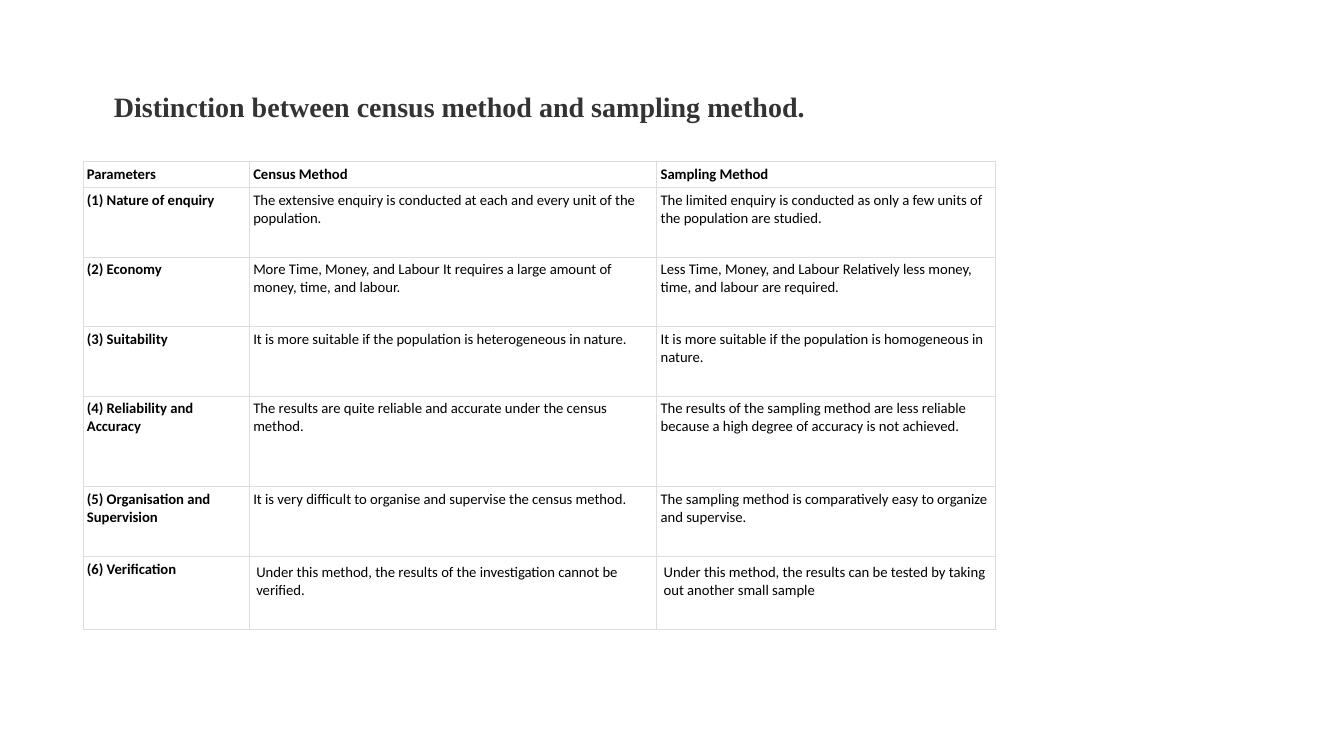
from lxml import etree
from pptx import Presentation
from pptx import util as u
from pptx.dml.color import RGBColor
from pptx.enum import text
from pptx.oxml import ns

WHITE = RGBColor(0xFF, 0xFF, 0xFF)
BLACK = RGBColor(0x00, 0x00, 0x00)
CHARCOAL = RGBColor(0x33, 0x33, 0x33)
RULE = RGBColor(0xDD, 0xDD, 0xDD)

COLUMNS = [12.38, 30.31, 25.21]
ROWS = [3.47, 9.2, 9.2, 9.2, 12, 9.2, 9.73]
COMPARISON = [
    ("Parameters", "Census Method", "Sampling Method"),
    ("(1) Nature of enquiry",
     "The extensive enquiry is conducted at each and every unit of the population.",
     "The limited enquiry is conducted as only a few units of the population are studied."),
    ("(2) Economy",
     "More Time, Money, and Labour It requires a large amount of money, time, and labour.",
     "Less Time, Money, and Labour Relatively less money, time, and labour are required."),
    ("(3) Suitability",
     "It is more suitable if the population is heterogeneous in nature.",
     "It is more suitable if the population is homogeneous in nature."),
    ("(4) Reliability and Accuracy",
     "The results are quite reliable and accurate under the census method.",
     "The results of the sampling method are less reliable because a high degree "
     "of accuracy is not achieved."),
    ("(5) Organisation and Supervision",
     "It is very difficult to organise and supervise the census method.",
     "The sampling method is comparatively easy to organize and supervise."),
    ("(6) Verification",
     "Under this method, the results of the investigation cannot be verified.",
     "Under this method, the results can be tested by taking out another small sample"),
]


class Deck:
    title_font, body_font = "Times New Roman", "Calibri"
    title_size, body_size = 20, 10.5
    inset, wide_inset = 0.04, 0.07

    def __init__(self):
        self.prs = Presentation()
        self.prs.slide_width = u.Inches(13.33)
        self.prs.slide_height = u.Inches(7.5)
        self.s = self.prs.slides.add_slide(self.prs.slide_layouts[5])
        self.s.background.fill.solid()
        self.s.background.fill.fore_color.rgb = WHITE

    def x(self, percent):
        return round(self.prs.slide_width * percent / 100)

    def y(self, percent):
        return round(self.prs.slide_height * percent / 100)

    def run(self, p, words, font, size, color, bold):
        r = p.add_run()
        r.text = words
        r.font.name = font
        r.font.size = u.Pt(size)
        r.font.color.rgb = color
        r.font.bold = bold

    def title(self, words, left, top, width, height):
        sp = self.s.shapes.title
        sp.left, sp.top = self.x(left), self.y(top)
        sp.width, sp.height = self.x(width), self.y(height)
        tf = sp.text_frame
        tf.word_wrap = True
        tf.vertical_anchor = text.MSO_ANCHOR.MIDDLE
        p = tf.paragraphs[0]
        p.alignment = text.PP_ALIGN.LEFT
        p.line_spacing = 0.9
        self.run(p, words, self.title_font, self.title_size, CHARCOAL, True)

    def borders(self, cell):
        tc_pr = cell._tc.get_or_add_tcPr()
        for side in ("L", "R", "T", "B"):
            ln = etree.SubElement(tc_pr, ns.qn(f"a:ln{side}"), w=str(u.Pt(0.6)))
            fill = etree.SubElement(ln, ns.qn("a:solidFill"))
            etree.SubElement(fill, ns.qn("a:srgbClr"), val=str(RULE))

    def cell(self, cell, words, bold, inset):
        self.borders(cell)
        cell.fill.solid()
        cell.fill.fore_color.rgb = WHITE
        cell.margin_left = cell.margin_right = u.Inches(inset)
        cell.margin_top = cell.margin_bottom = u.Inches(inset)
        self.run(cell.text_frame.paragraphs[0], words,
                 self.body_font, self.body_size, BLACK, bold)

    def table(self, data, columns, rows, left, top):
        table = self.s.shapes.add_table(
            len(rows), len(columns), self.x(left), self.y(top),
            self.x(sum(columns)), self.y(sum(rows))).table
        for column, width in zip(table.columns, columns):
            column.width = self.x(width)
        for row, height in zip(table.rows, rows):
            row.height = self.y(height)
        last = len(data) - 1
        for i, line in enumerate(data):
            for j, words in enumerate(line):
                inset = self.wide_inset if i == last and j > 0 else self.inset
                self.cell(table.cell(i, j), words, i == 0 or j == 0, inset)


def main():
    deck = Deck()
    deck.title("Distinction between census method and sampling method.",
               7.73, -0.13, 86.12, 28.93)
    deck.table(COMPARISON, COLUMNS, ROWS, 6.17, 21.33)
    deck.prs.save("out.pptx")


if __name__ == "__main__":
    main()
